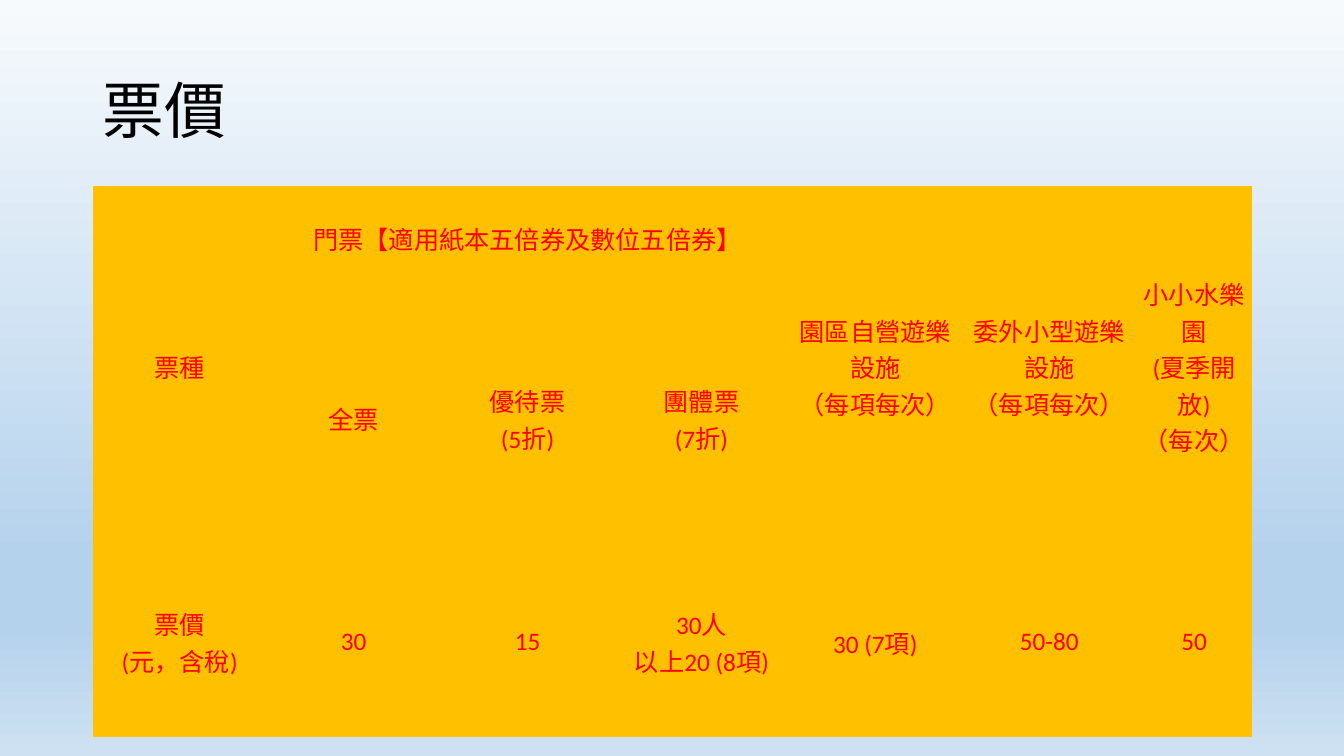
from lxml.etree import SubElement
from pptx import Presentation
from pptx.dml.color import RGBColor
from pptx.enum.text import MSO_ANCHOR, PP_ALIGN
from pptx.oxml.ns import qn
from pptx.util import Inches, Pt

COLUMN, ROW = 0.115, 0.05
NO_STYLE = "{2D5ABB26-0587-4C30-8999-92F81FD0307C}"
SKY = [(0, "F7FAFD"), (74, "B5D2EC"), (83, "B5D2EC"), (100, "CEE1F2")]

TICKETS = [
    ["票種", "門票【適用紙本五倍券及數位五倍券】", "", "",
     "園區自營遊樂設施\n（每項每次）", "委外小型遊樂設施\n（每項每次）",
     "小小水樂園\n(夏季開放)\n（每次）"],
    ["", "全票", "優待票\n(5折)", "團體票\n(7折)", "", "", ""],
    ["票價\n(元，含稅)", "30", "15", "30人\n以上20 (8項)", "30 (7項)", "50-80", "50"],
]
MERGES = [((0, 1), (0, 3))] + [((0, c), (1, c)) for c in (0, 4, 5, 6)]


def color(value):
    return RGBColor.from_string(value)


def across(columns):
    return Inches(columns * COLUMN)


def down(rows):
    return Inches(rows * ROW)


def apply(target, values):
    for name, value in values.items():
        setattr(target, name, value)


class Deck:
    title = {"name": "Calibri", "size": Pt(44), "color": "000000"}
    body = {"name": "Calibri", "size": Pt(18), "color": "FF0000"}
    cell = {"vertical_anchor": MSO_ANCHOR.MIDDLE} | dict.fromkeys(
        ("margin_left", "margin_right", "margin_top", "margin_bottom"), Inches(0.03))
    cell_fill = "FFC000"

    def __init__(self):
        self.prs = Presentation()
        apply(self.prs, {"slide_width": Inches(13.33), "slide_height": Inches(7.5)})
        self.s = self.prs.slides.add_slide(self.prs.slide_layouts[6])

    def background(self, stops):
        fill = self.s.background.fill
        fill.gradient()
        fill.gradient_angle = 270
        gs_list = next(self.s.element.iter(qn("a:gsLst")))
        for gs in list(gs_list):
            gs_list.remove(gs)
        for position, value in stops:
            gs = SubElement(gs_list, qn("a:gs"), pos=str(position * 1000))
            SubElement(gs, qn("a:srgbClr"), val=value)

    def text(self, tf, wording, style, **paragraph):
        p = tf.paragraphs[0]
        p.text = wording
        apply(p, paragraph)
        for r in p.runs:
            apply(r.font, {k: v for k, v in style.items() if k != "color"})
            r.font.color.rgb = color(style["color"])

    def heading(self, wording, x, y, w, h):
        sp = self.s.shapes.add_textbox(across(x), down(y), across(w), down(h))
        tf = sp.text_frame
        apply(tf, {"word_wrap": True, "vertical_anchor": MSO_ANCHOR.MIDDLE})
        self.text(tf, wording, self.title, line_spacing=0.9)

    def table(self, data, merges, x, y, widths, heights):
        frame = self.s.shapes.add_table(
            len(heights), len(widths), across(x), down(y),
            across(sum(widths)), down(sum(heights)))
        table = frame.table
        apply(table, {"first_row": False, "horz_banding": False})
        next(frame.element.iter(qn("a:tableStyleId"))).text = NO_STYLE
        for column, width in zip(table.columns, widths):
            column.width = across(width)
        for row, height, wordings in zip(table.rows, heights, data):
            row.height = down(height)
            for cell, wording in zip(row.cells, wordings):
                apply(cell, self.cell)
                cell.fill.solid()
                cell.fill.fore_color.rgb = color(self.cell_fill)
                self.text(cell.text_frame, wording, self.body, alignment=PP_ALIGN.CENTER)
        for start, end in merges:
            table.cell(*start).merge(table.cell(*end))


def main():
    deck = Deck()
    deck.background(SKY)
    deck.heading("票價", 8, 8, 100, 29)
    deck.table(TICKETS, MERGES, 8, 37, [15] * 6 + [10], [20.6, 51, 37.6])
    deck.prs.save("out.pptx")


if __name__ == "__main__":
    main()
